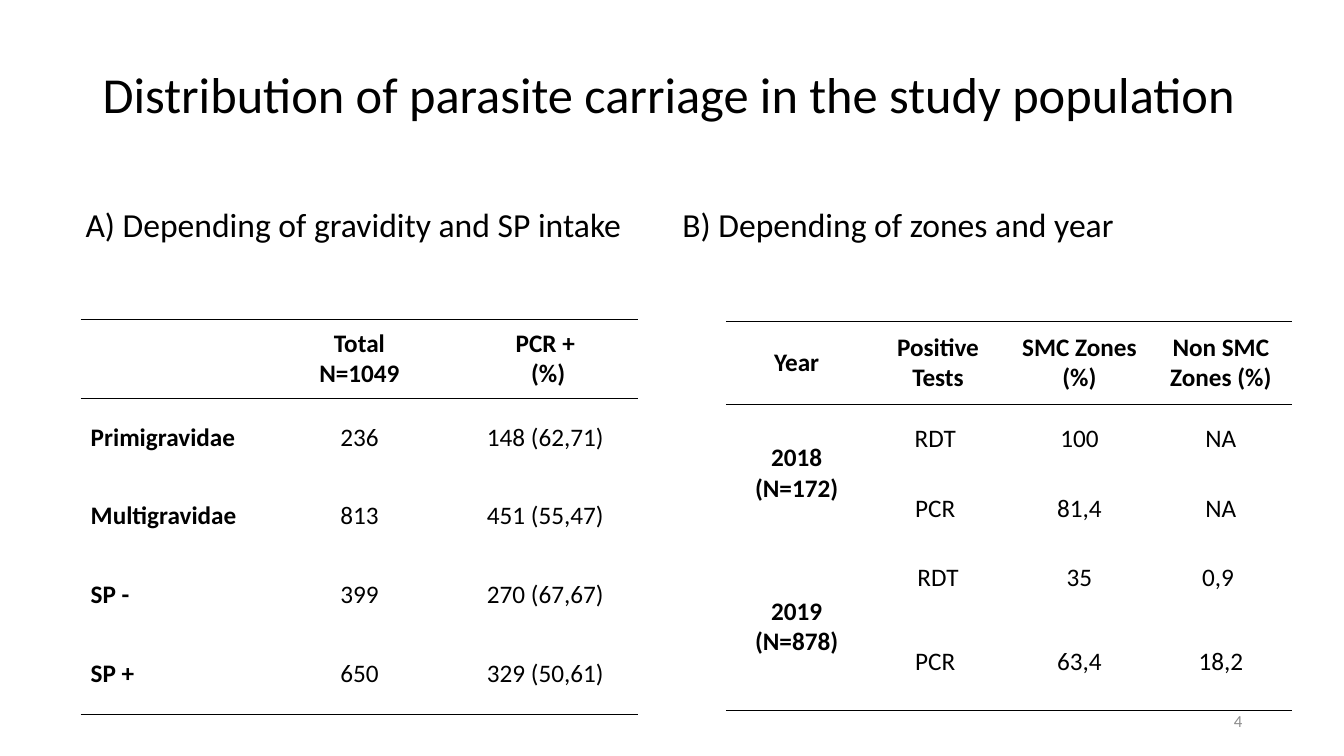
from dataclasses import dataclass

from lxml.etree import SubElement
from pptx import Presentation
from pptx.dml.color import RGBColor
from pptx.enum.text import MSO_ANCHOR as Anchor, PP_ALIGN as Align
from pptx.oxml import parse_xml
from pptx.oxml.ns import nsdecls, qn
from pptx.util import Inches, Pt


@dataclass(frozen=True)
class Theme:
    font: str = "Calibri"
    ink: str = "000000"
    muted: str = "8C8C8C"
    title: int = 36
    heading: int = 24
    body: int = 18
    footer: int = 12
    rule: int = 1


THEME = Theme()

GRAVIDITY = [
    ["", "Total\nN=1049", "PCR +\n (%)"],
    ["Primigravidae", "236", "148 (62,71)"],
    ["Multigravidae", "813", "451 (55,47)"],
    ["SP -", "399", "270 (67,67)"],
    ["SP +", "650", "329 (50,61)"],
]
ZONES = [
    ["Year", "Positive\nTests", "SMC Zones (%)", "Non SMC Zones (%)"],
    ["2018\n(N=172)", "RDT ", "100", "NA"],
    [None, "PCR ", "81,4", "NA"],
    ["2019\n(N=878)", "RDT", "35", "0,9 "],
    [None, "PCR ", "63,4", "18,2"],
]


def write(frame, text, size=THEME.body, color=THEME.ink, bold=False,
          align=Align.LEFT, spacing=None):
    frame.word_wrap = True
    for index, line in enumerate(text.split("\n")):
        paragraph = frame.add_paragraph() if index else frame.paragraphs[0]
        paragraph.alignment = align
        paragraph.line_spacing = spacing
        run = paragraph.add_run()
        run.text = line
        run.font.name = THEME.font
        run.font.size = Pt(size)
        run.font.bold = bold
        run.font.color.rgb = RGBColor.from_string(color)


def add_text(slide, text, left, top, width, height, anchor=Anchor.MIDDLE, **style):
    frame = slide.shapes.add_textbox(
        Inches(left), Inches(top), Inches(width), Inches(height)).text_frame
    frame.vertical_anchor = anchor
    write(frame, text, **style)


def set_borders(cell, top, bottom):
    edges = {"lnL": False, "lnR": False, "lnT": top, "lnB": bottom}
    properties = cell._tc.get_or_add_tcPr()
    for position, (edge, ruled) in enumerate(edges.items()):
        line = parse_xml(f'<a:{edge} {nsdecls("a")} w="{Pt(THEME.rule)}"/>')
        if ruled:
            fill = SubElement(line, qn("a:solidFill"))
            SubElement(fill, qn("a:srgbClr"), val=THEME.ink)
        else:
            SubElement(line, qn("a:noFill"))
        properties.insert(position, line)


def add_ruled_table(slide, rows, left, top, width, heights, label_align):
    table = slide.shapes.add_table(
        len(rows), len(rows[0]), Inches(left), Inches(top),
        Inches(width), Inches(sum(heights))).table
    table.first_row = table.horz_banding = False
    for row, height in zip(table.rows, heights):
        row.height = Inches(height)
    for r, values in enumerate(rows):
        if values[0] is None:
            table.cell(r - 1, 0).merge(table.cell(r, 0))
    ruled = {0, 1, len(rows)}
    for r, values in enumerate(rows):
        for c, value in enumerate(values):
            cell = table.cell(r, c)
            cell.fill.background()
            cell.vertical_anchor = Anchor.MIDDLE
            end = r + (cell.span_height if cell.is_merge_origin else 1)
            set_borders(cell, r in ruled, end in ruled)
            if value:
                write(cell.text_frame, value, bold=r == 0 or c == 0,
                      align=label_align if c == 0 else Align.CENTER)


def main():
    deck = Presentation()
    deck.slide_width, deck.slide_height = Inches(13.33), Inches(7.5)
    slide = deck.slides.add_slide(deck.slide_layouts[6])
    add_text(slide, "Distribution of parasite carriage in the study population",
             0.92, 0.4, 11.5, 1.13, size=THEME.title, spacing=0.9)
    for heading, left, width in (
            ("A) Depending of gravidity and SP intake", 0.75, 5.64),
            ("B) Depending of zones and year", 6.67, 5.67)):
        add_text(slide, heading, left, 1.58, width, 0.9, anchor=Anchor.BOTTOM,
                 size=THEME.heading, spacing=0.9)
    add_ruled_table(slide, GRAVIDITY, 0.8, 3.17, 5.53,
                    [0.78] * 4 + [0.8], Align.LEFT)
    add_ruled_table(slide, ZONES, 7.2, 3.19, 5.61,
                    [0.82] + [0.69] * 3 + [0.97], Align.CENTER)
    add_text(slide, "4", 9.42, 6.95, 3, 0.4, size=THEME.footer,
             color=THEME.muted, align=Align.RIGHT)
    deck.save("out.pptx")


if __name__ == "__main__":
    main()
